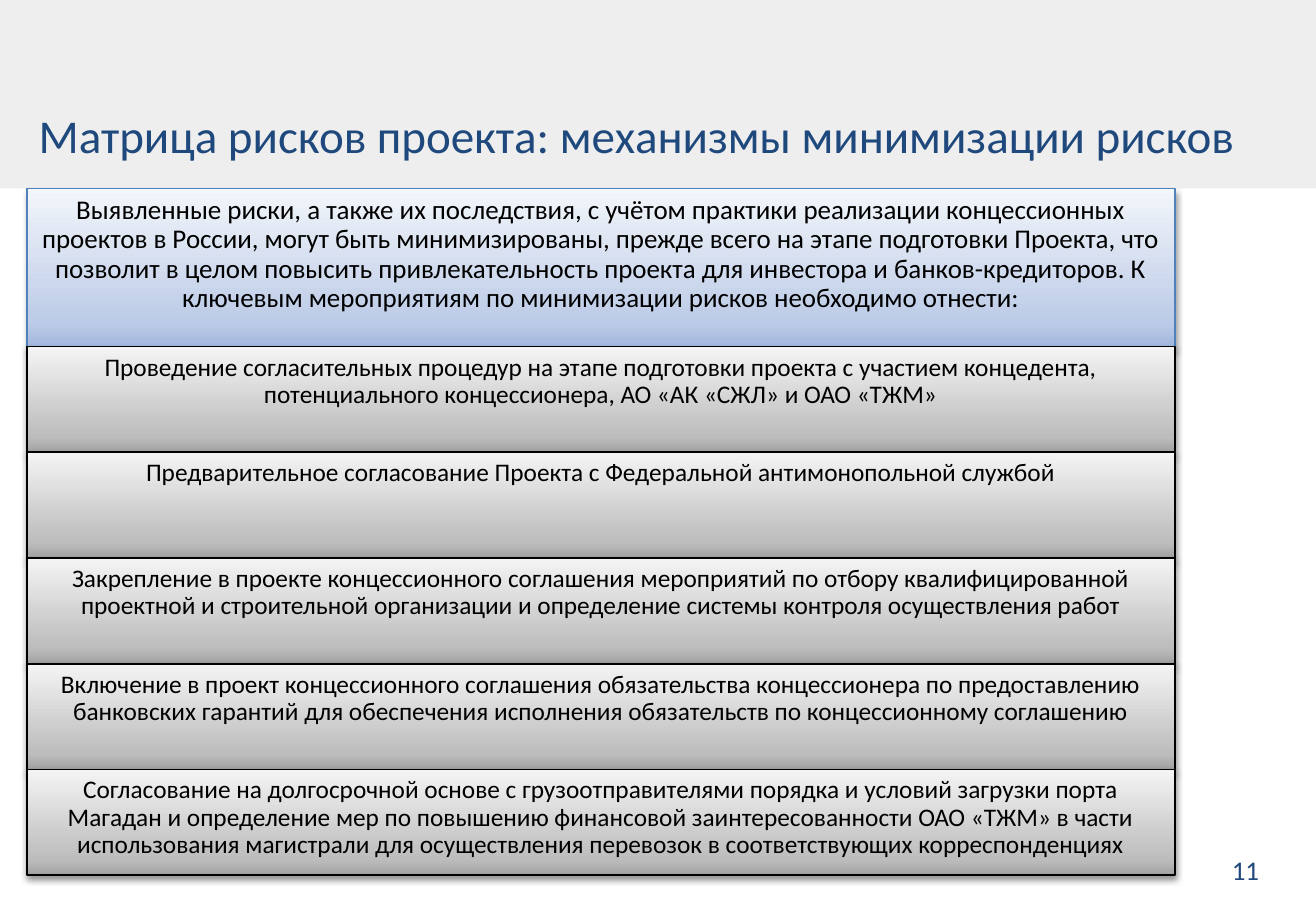
"""Build the slide on mechanisms for minimising project risks."""
from copy import deepcopy

from lxml import etree
from pptx import Presentation
from pptx.dml.color import RGBColor
from pptx.enum import shapes, text
from pptx.oxml import ns
from pptx.util import Cm, Pt

FONT = "Calibri"
NAVY = RGBColor(0x1F, 0x49, 0x7D)
BLUE = RGBColor(0x4F, 0x81, 0xBD)
BLACK = RGBColor(0, 0, 0)
WHITE = RGBColor(0xFF, 0xFF, 0xFF)
BACKDROP = RGBColor(0xEE, 0xEE, 0xEE)
BLUE_BLEND = [RGBColor.from_string(c) for c in ("A3B8DF", "BCCBE7", "F3F6FA")]
GRAY_BLEND = [RGBColor.from_string(c) for c in ("A2A2A2", "BDBDBD", "F4F4F4")]
BLEND_POSITIONS = (0, 0.15, 1)

SLIDE_WIDTH, SLIDE_HEIGHT = Cm(27.51), Cm(19.05)
BODY_TOP = Cm(3.94)
LEFT, ROW_WIDTH = Cm(0.56), Cm(24)
INTRO_HEIGHT, MEASURE_HEIGHT = Cm(3.31), Cm(2.21)

TITLE = "Матрица рисков проекта: механизмы минимизации рисков"
INTRO = (
    "Выявленные риски, а также их последствия, с учётом практики реализации "
    "концессионных проектов в России, могут быть минимизированы, прежде всего "
    "на этапе подготовки Проекта, что позволит в целом повысить "
    "привлекательность проекта для инвестора и банков-кредиторов. К ключевым "
    "мероприятиям по минимизации рисков необходимо отнести:"
)
MEASURES = (
    "Проведение согласительных процедур на этапе подготовки проекта с участием "
    "концедента, потенциального концессионера, АО «АК «СЖЛ» и ОАО «ТЖМ»",
    "Предварительное согласование Проекта с Федеральной антимонопольной службой",
    "Закрепление в проекте концессионного соглашения мероприятий по отбору "
    "квалифицированной проектной и строительной организации и определение "
    "системы контроля осуществления работ",
    "Включение в проект концессионного соглашения обязательства концессионера "
    "по предоставлению банковских гарантий для обеспечения исполнения "
    "обязательств по концессионному соглашению",
    "Согласование на долгосрочной основе с грузоотправителями порядка и условий "
    "загрузки порта Магадан и определение мер по повышению финансовой "
    "заинтересованности ОАО «ТЖМ» в части использования магистрали для "
    "осуществления перевозок в соответствующих корреспонденциях",
)


def write(frame, wording, size, color, align, anchor):
    """Fill a text frame with one styled paragraph."""
    frame.word_wrap = True
    frame.vertical_anchor = anchor
    paragraph = frame.paragraphs[0]
    paragraph.text = wording
    paragraph.alignment = align
    paragraph.font.name = FONT
    paragraph.font.size = Pt(size)
    paragraph.font.color.rgb = color
    return paragraph


def add_label(slide, box, *style):
    """Add a text box with one paragraph."""
    write(slide.shapes.add_textbox(*box).text_frame, *style)


def cast_shadow(item):
    """Give a shape or connector a soft shadow below it."""
    effects = etree.SubElement(item._element.spPr, ns.qn("a:effectLst"))
    shadow = etree.SubElement(
        effects, ns.qn("a:outerShdw"), blurRad=str(Pt(4)), dist=str(Pt(2)),
        dir="5400000", rotWithShape="0")
    color = etree.SubElement(shadow, ns.qn("a:srgbClr"), val=str(BLACK))
    etree.SubElement(color, ns.qn("a:alpha"), val="43000")


def outline(item, color):
    """Draw a thin line with a shadow."""
    item.line.color.rgb = color
    item.line.width = Pt(1)
    cast_shadow(item)


def blend(fill, panel, colors):
    """Apply a three-stop gradient that lightens upwards."""
    fill.gradient()
    fill.gradient_angle = 90
    stops = panel._element.spPr.find(".//" + ns.qn("a:gsLst"))
    stops.append(deepcopy(stops[0]))
    for stop, position, color in zip(fill.gradient_stops, BLEND_POSITIONS, colors):
        stop.position = position
        stop.color.rgb = color


def add_row(slide, top, height, wording, size, inset, colors, border):
    """Add a separator and a shaded panel with its wording."""
    separator = slide.shapes.add_connector(
        shapes.MSO_CONNECTOR.STRAIGHT, LEFT, top, LEFT + ROW_WIDTH, top)
    outline(separator, BLUE)
    panel = slide.shapes.add_shape(
        shapes.MSO_SHAPE.RECTANGLE, LEFT, top, ROW_WIDTH, height)
    blend(panel.fill, panel, colors)
    outline(panel, border)
    frame = panel.text_frame
    frame.margin_left = frame.margin_right = inset
    frame.margin_top = frame.margin_bottom = inset
    paragraph = write(frame, wording, size, BLACK,
                      text.PP_ALIGN.CENTER, text.MSO_ANCHOR.TOP)
    paragraph.line_spacing = 0.9


def add_backdrop(slide):
    """Paint the gray background and the white body area."""
    background = slide.background.fill
    background.solid()
    background.fore_color.rgb = BACKDROP
    body = slide.shapes.add_shape(
        shapes.MSO_SHAPE.RECTANGLE, 0, BODY_TOP, SLIDE_WIDTH, SLIDE_HEIGHT - BODY_TOP)
    body.shadow.inherit = False
    body.fill.solid()
    body.fill.fore_color.rgb = WHITE
    body.line.fill.background()


def main():
    """Assemble and save the slide."""
    deck = Presentation()
    deck.slide_width, deck.slide_height = SLIDE_WIDTH, SLIDE_HEIGHT
    slide = deck.slides.add_slide(deck.slide_layouts[6])
    add_backdrop(slide)
    add_label(slide, (LEFT, Cm(1.68), Cm(25.6), Cm(1.85)), TITLE, 27.9, NAVY,
              text.PP_ALIGN.LEFT, text.MSO_ANCHOR.BOTTOM)
    add_label(slide, (Cm(20.14), Cm(17.73), Cm(6.43), Cm(1.32)), "11", 16, NAVY,
              text.PP_ALIGN.RIGHT, text.MSO_ANCHOR.TOP)
    add_row(slide, BODY_TOP, INTRO_HEIGHT, INTRO, 16, Cm(0.17), BLUE_BLEND, BLUE)
    for index, measure in enumerate(MEASURES):
        top = BODY_TOP + INTRO_HEIGHT + index * MEASURE_HEIGHT
        add_row(slide, top, MEASURE_HEIGHT, measure, 15, Cm(0.16), GRAY_BLEND, BLACK)
    deck.save("out.pptx")


if __name__ == "__main__":
    main()
